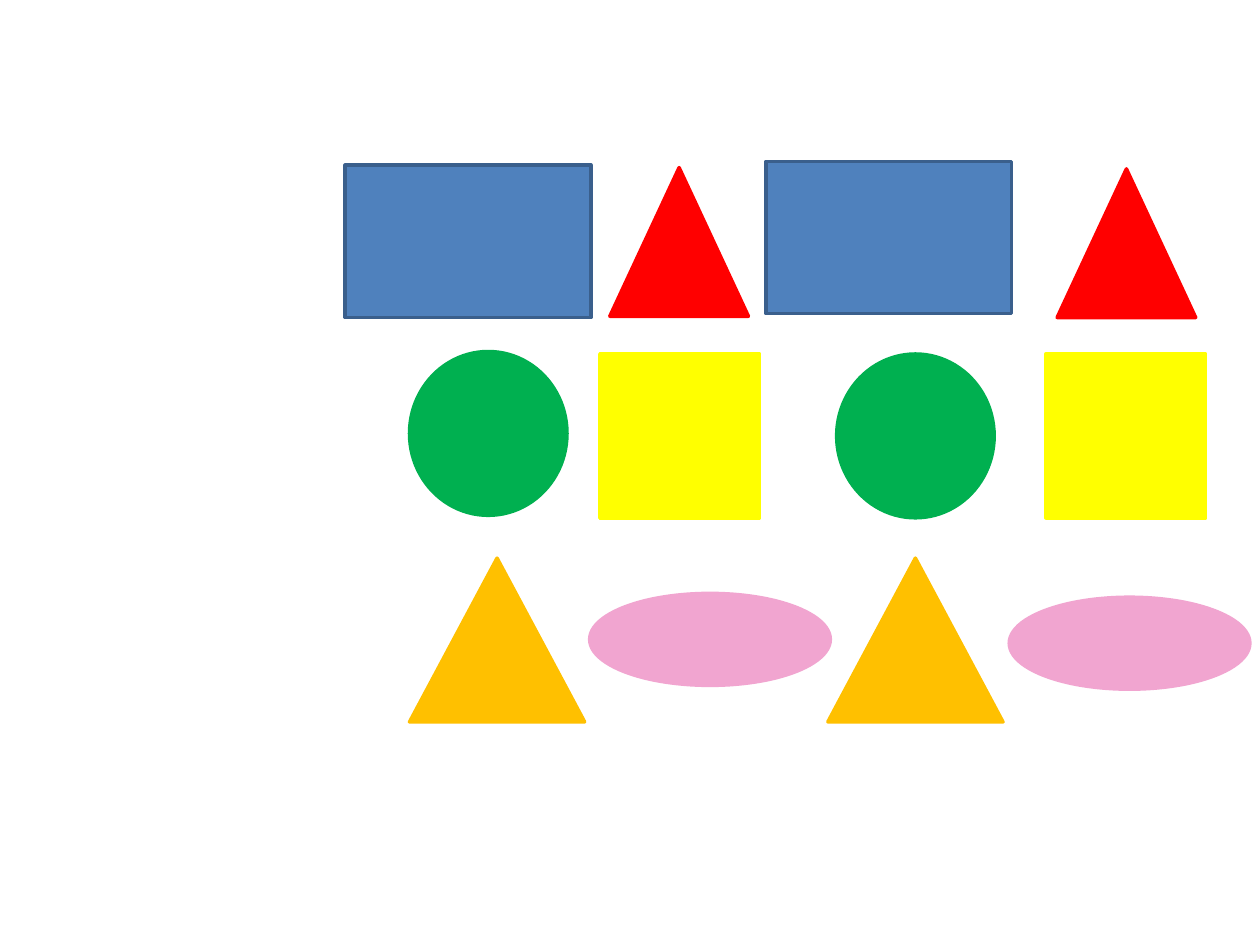
"""Build a slide with three rows of alternating coloured shapes."""
import pptx
import pptx.dml.color
import pptx.enum.shapes
import pptx.util

KINDS = pptx.enum.shapes.MSO_SHAPE
PX = 914400 // 100
SLIDE_SIZE = (1000, 750)
LINE_WIDTH = 2

PATTERNS = [
    (KINDS.RECTANGLE, "4F81BD", "3A5F8C", (195, 121), [(274, 131), (608, 128)]),
    (KINDS.ISOSCELES_TRIANGLE, "FF0000", "FF0000", (110, 118), [(484, 133), (839, 134)]),
    (KINDS.OVAL, "00B050", "00B050", (125, 130), [(325, 279), (664, 281)]),
    (KINDS.RECTANGLE, "FFFF00", "FFFF00", (127, 130), [(476, 281), (830, 281)]),
    (KINDS.ISOSCELES_TRIANGLE, "FFC000", "FFC000", (139, 130), [(325, 443), (657, 443)]),
    (KINDS.OVAL, "F1A5D0", "F1A5D0", (191, 73), [(468, 471), (801, 474)]),
]


def color(value):
    return pptx.dml.color.RGBColor.from_string(value)


def add_figure(slide, kind, fill, line, size, position):
    shape = slide.shapes.add_shape(kind, *(length * PX for length in position + size))
    shape.shadow.inherit = False
    shape.fill.solid()
    shape.fill.fore_color.rgb = color(fill)
    shape.line.color.rgb = color(line)
    shape.line.width = pptx.util.Pt(LINE_WIDTH)


def main():
    presentation = pptx.Presentation()
    presentation.slide_width, presentation.slide_height = (
        pptx.util.Emu(length * PX) for length in SLIDE_SIZE
    )
    slide = presentation.slides.add_slide(presentation.slide_layouts[6])
    for kind, fill, line, size, positions in PATTERNS:
        for position in positions:
            add_figure(slide, kind, fill, line, size, position)
    presentation.save("out.pptx")


if __name__ == "__main__":
    main()
